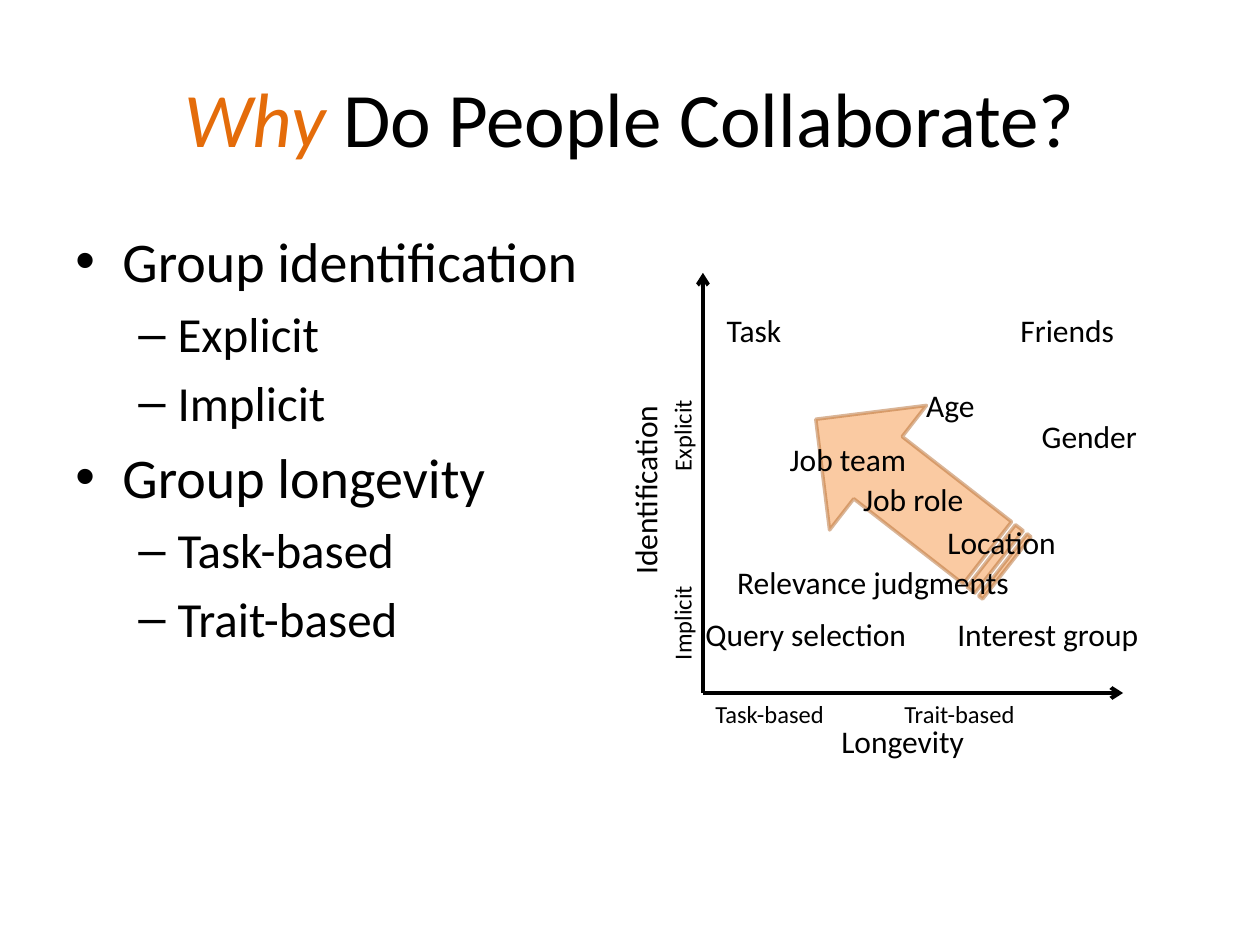
from dataclasses import dataclass

from lxml.etree import SubElement
from pptx import Presentation
from pptx.dml.color import RGBColor
from pptx.enum.shapes import MSO_CONNECTOR, MSO_SHAPE
from pptx.enum.text import MSO_ANCHOR, MSO_AUTO_SIZE, PP_ALIGN
from pptx.oxml.ns import qn
from pptx.util import Cm, Pt


@dataclass(frozen=True)
class Theme:
    font: str = "Calibri"
    ink: str = "000000"
    accent: str = "E46C0A"
    arrow_fill: str = "F79646"
    arrow_line: str = "B66D31"
    title: int = 44
    body: tuple = (32, 28)
    label: int = 18
    tick: int = 14


BULLETS = (("•", 0.95, 0.95), ("–", 2.06, 0.79))
ORIGIN = (14.17, 13.97)
AXIS_LENGTH = 8.47
LABEL_HEIGHT = 1.02
TICK_HEIGHT = 0.86

OUTLINE = [
    ("Group identification", 0),
    ("Explicit", 1),
    ("Implicit", 1),
    ("Group longevity", 0),
    ("Task-based", 1),
    ("Trait-based", 1),
]
GROUPS = [
    ("Task", 14.4, 6.15, 2.34),
    ("Age", 18.42, 7.65, 1.7),
    ("Gender", 20.75, 8.28, 2.54),
    ("Job team", 15.67, 8.74, 3.81),
    ("Job role", 17.15, 9.55, 3.38),
    ("Location", 18.85, 10.41, 3.61),
    ("Interest group", 19.05, 12.27, 4.24),
    ("Relevance judgments", 14.61, 11.23, 6.99),
    ("Query selection", 13.97, 12.27, 4.88),
    ("Friends", 20.32, 6.15, 2.74),
]


class SlideBuilder:
    def __init__(self, page, theme):
        self.page = page
        self.theme = theme

    def set_all(self, target, values):
        for name, value in values.items():
            setattr(target, name, value)

    def add_span(self, para, text, size, color=None, italic=False):
        span = para.add_run()
        span.text = text
        values = {"name": self.theme.font, "size": Pt(size), "italic": italic}
        self.set_all(span.font, values)
        span.font.color.rgb = RGBColor.from_string(color or self.theme.ink)

    def add_box(self, left, top, width, height, **values):
        box = self.page.shapes.add_textbox(Cm(left), Cm(top), Cm(width), Cm(height))
        self.set_all(box.text_frame, {"word_wrap": True, **values})
        return box

    def add_title(self, spans, place):
        box = self.add_box(*place, vertical_anchor=MSO_ANCHOR.MIDDLE)
        para = box.text_frame.paragraphs[0]
        para.alignment = PP_ALIGN.CENTER
        for text, color, italic in spans:
            self.add_span(para, text, self.theme.title, color, italic)

    def add_outline(self, entries, place):
        frame = self.add_box(*place).text_frame
        for index, (text, level) in enumerate(entries):
            para = frame.add_paragraph() if index else frame.paragraphs[0]
            size = self.theme.body[level]
            self.set_all(para, {"level": level, "space_before": Pt(size * 0.2)})
            mark, margin, hanging = BULLETS[level]
            properties = para._p.get_or_add_pPr()
            properties.set("marL", str(Cm(margin)))
            properties.set("indent", str(-Cm(hanging)))
            SubElement(properties, qn("a:buFont"), typeface="Arial")
            SubElement(properties, qn("a:buChar"), char=mark)
            self.add_span(para, text, size)

    def add_label(self, text, left, top, width, height=LABEL_HEIGHT, size=None, rotation=0):
        box = self.add_box(left, top, width, height, auto_size=MSO_AUTO_SIZE.SHAPE_TO_FIT_TEXT)
        box.rotation = rotation
        self.add_span(box.text_frame.paragraphs[0], text, size or self.theme.label)

    def add_axis(self, end):
        points = [Cm(value) for value in (*ORIGIN, *end)]
        axis = self.page.shapes.add_connector(MSO_CONNECTOR.STRAIGHT, *points)
        axis.line.width = Pt(2.25)
        axis.line.color.rgb = RGBColor.from_string(self.theme.ink)
        SubElement(axis.line._get_or_add_ln(), qn("a:tailEnd"), type="arrow")
        SubElement(axis._element.spPr, qn("a:effectLst"))

    def add_trend_arrow(self, left, top, width, height, rotation):
        arrow = self.page.shapes.add_shape(
            MSO_SHAPE.STRIPED_RIGHT_ARROW, Cm(left), Cm(top), Cm(width), Cm(height)
        )
        arrow.rotation = rotation
        arrow.shadow.inherit = False
        arrow.fill.solid()
        arrow.line.width = Pt(2)
        arrow.line.fill.solid()
        colors = ((arrow.fill, self.theme.arrow_fill), (arrow.line.fill, self.theme.arrow_line))
        for fill, color in colors:
            fill.fore_color.rgb = RGBColor.from_string(color)
        for color in arrow._element.spPr.iter(qn("a:srgbClr")):
            SubElement(color, qn("a:alpha"), val="50000")


def main():
    deck = Presentation()
    deck.slide_width, deck.slide_height = Cm(25.4), Cm(19.05)
    theme = Theme()
    builder = SlideBuilder(deck.slides.add_slide(deck.slide_layouts[6]), theme)

    builder.add_trend_arrow(15.93, 8.36, 4.88, 3.18, 217.9)
    builder.add_title(
        [("Why ", theme.accent, True), ("Do People Collaborate?", theme.ink, False)],
        (1.27, 0.76, 22.86, 3.18),
    )
    builder.add_outline(OUTLINE, (1.27, 4.45, 11.23, 12.57))

    x, y = ORIGIN
    builder.add_axis((x + AXIS_LENGTH, y))
    builder.add_label("Task-based\t\tTrait-based", x, y, 8.05, TICK_HEIGHT, theme.tick)
    builder.add_label("Longevity", 16.71, 14.43, 4.01)
    builder.add_axis((x, y - AXIS_LENGTH))
    builder.add_label("Identification", 11, 9.32, 4.01, rotation=270)
    builder.add_label("Implicit\t\tExplicit", 10.16, 9.53, 7.19, TICK_HEIGHT, theme.tick, 270)

    for text, left, top, width in GROUPS:
        builder.add_label(text, left, top, width)

    deck.save("out.pptx")


if __name__ == "__main__":
    main()
